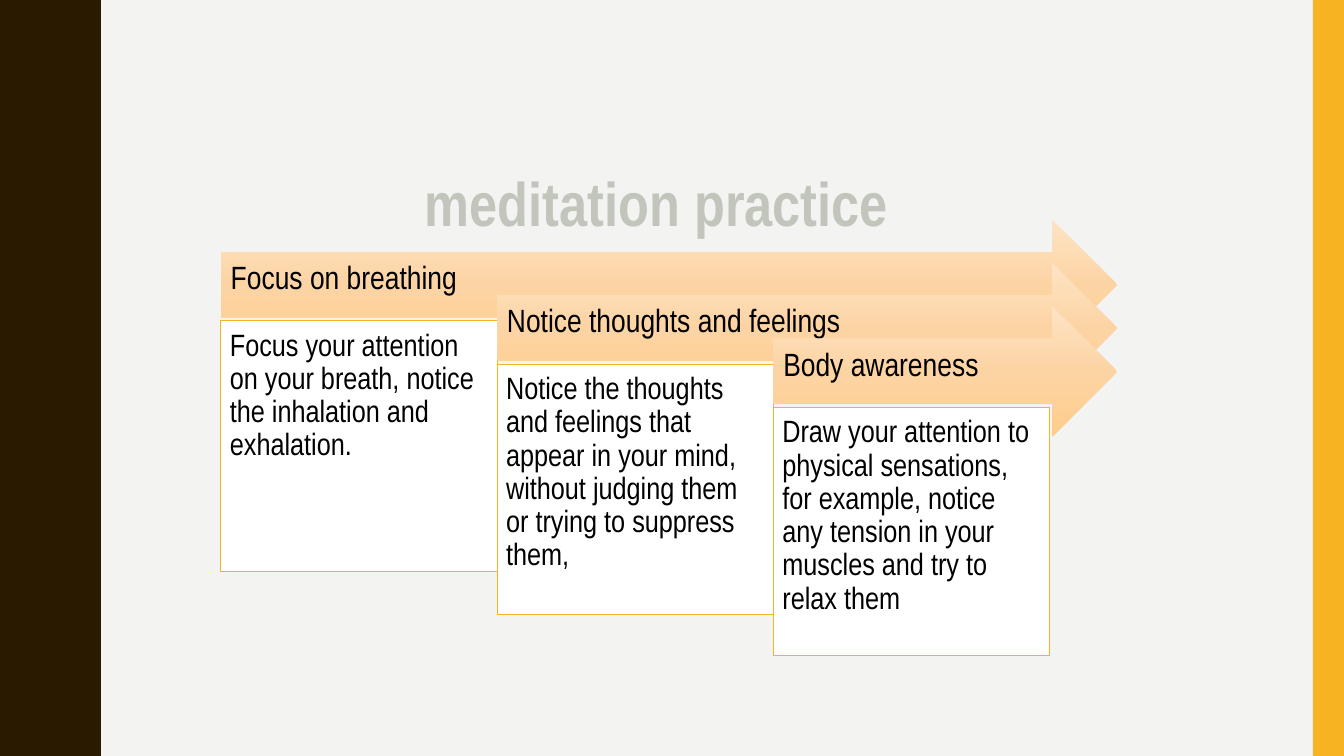
import copy
from pptx import Presentation, util as u
from pptx.dml.color import RGBColor
from pptx.enum import shapes, text

THEME = dict(
    font="Arial Narrow", back="F3F3F2", wave="2A1A00", accent="F8B323",
    title="C2C5BB", ink="000000", paper="FFFFFF",
    arrow=((0, "FEE3C5"), (0.5, "FCD4A4"), (1, "FFCD8B")),
    title_pt=44, head_pt=23, body_pt=22,
)
W, H = 13.33, 7.5


def paint(sp, color):
    sp.fill.solid()
    sp.fill.fore_color.rgb = RGBColor.from_string(color)
    sp.line.fill.background()
    sp.shadow.inherit = False


def write(sp, words, pt, color, margins, anchor, align, spacing=1.0, bold=False):
    tf = sp.text_frame
    tf.text = words
    sides = ("margin_left", "margin_top", "margin_right", "margin_bottom")
    frame = dict(zip(sides, map(u.Inches, margins)), word_wrap=True,
                 auto_size=text.MSO_AUTO_SIZE.NONE, vertical_anchor=anchor)
    for name, value in frame.items():
        setattr(tf, name, value)
    p = tf.paragraphs[0]
    p.alignment, p.line_spacing = align, spacing
    r = p.runs[0]
    for name, value in dict(name=THEME["font"], size=u.Pt(pt), bold=bold).items():
        setattr(r.font, name, value)
    r.font.color.rgb = RGBColor.from_string(color)


prs = Presentation()
prs.slide_width, prs.slide_height = u.Inches(W), u.Inches(H)
s = prs.slides.add_slide(prs.slide_layouts[5])
s.background.fill.solid()
s.background.fill.fore_color.rgb = RGBColor.from_string(THEME["back"])

# Wavy left edge: a half wave, mirrored, repeated five times down the slide
half = [(0.78, 0), (0.78, 0.07), (0.79, 0.14), (0.8, 0.2), (0.81, 0.25),
        (0.83, 0.29), (0.85, 0.33), (0.87, 0.38), (0.89, 0.42), (0.91, 0.46),
        (0.93, 0.5), (0.95, 0.55), (0.96, 0.61), (0.97, 0.68), (0.97, 0.75)]
period = H / 5
wave = half + [(x, period - y) for x, y in half[-2:0:-1]]
edge = [(x, y + period * i) for i in range(5) for x, y in wave]
fb = s.shapes.build_freeform(0, 0, scale=u.Inches(1))
fb.add_line_segments(edge + [(0.78, H), (0, H)], close=True)
paint(fb.convert_to_shape(), THEME["wave"])

# Right band
band = s.shapes.add_shape(shapes.MSO_SHAPE.RECTANGLE, u.Inches(13.02), 0,
                          u.Inches(W - 13.02), u.Inches(H))
paint(band, THEME["accent"])

# Title
title = s.shapes.title
for name, value in dict(left=2.66, top=1.57, width=7.71, height=0.86).items():
    setattr(title, name, u.Inches(value))
write(title, "meditation practice", THEME["title_pt"], THEME["title"],
      (0.1, 0.05, 0.1, 0.05), text.MSO_ANCHOR.MIDDLE, text.PP_ALIGN.CENTER, bold=True)

# Stepped arrows, each with its box below
LEFT, TOP, TIP = 2.19, 2.18, 11.08
COL, STEP, ARROW_H = 2.74, 0.43, 1.29
steps = [
    ("Focus on breathing", 2.49,
     "Focus your attention on your breath, notice the inhalation and exhalation."),
    ("Notice thoughts and feelings", 2.49,
     "Notice the thoughts and feelings that appear in your mind, "
     "without judging them or trying to suppress them,"),
    ("Body awareness", 2.46,
     "Draw your attention to physical sensations, for example, "
     "notice any tension in your muscles and try to relax them"),
]
for i, (head, box_h, body) in enumerate(steps):
    x, y = LEFT + COL * i, TOP + STEP * i
    arrow = s.shapes.add_shape(shapes.MSO_SHAPE.RIGHT_ARROW, u.Inches(x), u.Inches(y),
                               u.Inches(TIP - x), u.Inches(ARROW_H))
    paint(arrow, THEME["paper"])
    arrow.fill.gradient()
    arrow.fill.gradient_angle = 270
    stops = arrow._element.spPr.find(".//{*}gsLst")
    stops.append(copy.deepcopy(stops[-1]))
    for stop, (place, color) in zip(arrow.fill.gradient_stops, THEME["arrow"]):
        stop.position = place
        stop.color.rgb = RGBColor.from_string(color)
    write(arrow, head, THEME["head_pt"], THEME["ink"], (0.1, 0.1, 0.28, 0.21),
          text.MSO_ANCHOR.MIDDLE, text.PP_ALIGN.LEFT, 0.9)

    box = s.shapes.add_shape(shapes.MSO_SHAPE.RECTANGLE, u.Inches(x), u.Inches(y + 1),
                             u.Inches(COL), u.Inches(box_h))
    paint(box, THEME["paper"])
    box.line.color.rgb = RGBColor.from_string(THEME["accent"])
    box.line.width = u.Pt(0.5)
    write(box, body, THEME["body_pt"], THEME["ink"], (0.09,) * 4,
          text.MSO_ANCHOR.TOP, text.PP_ALIGN.LEFT, 0.9)

prs.save("out.pptx")
